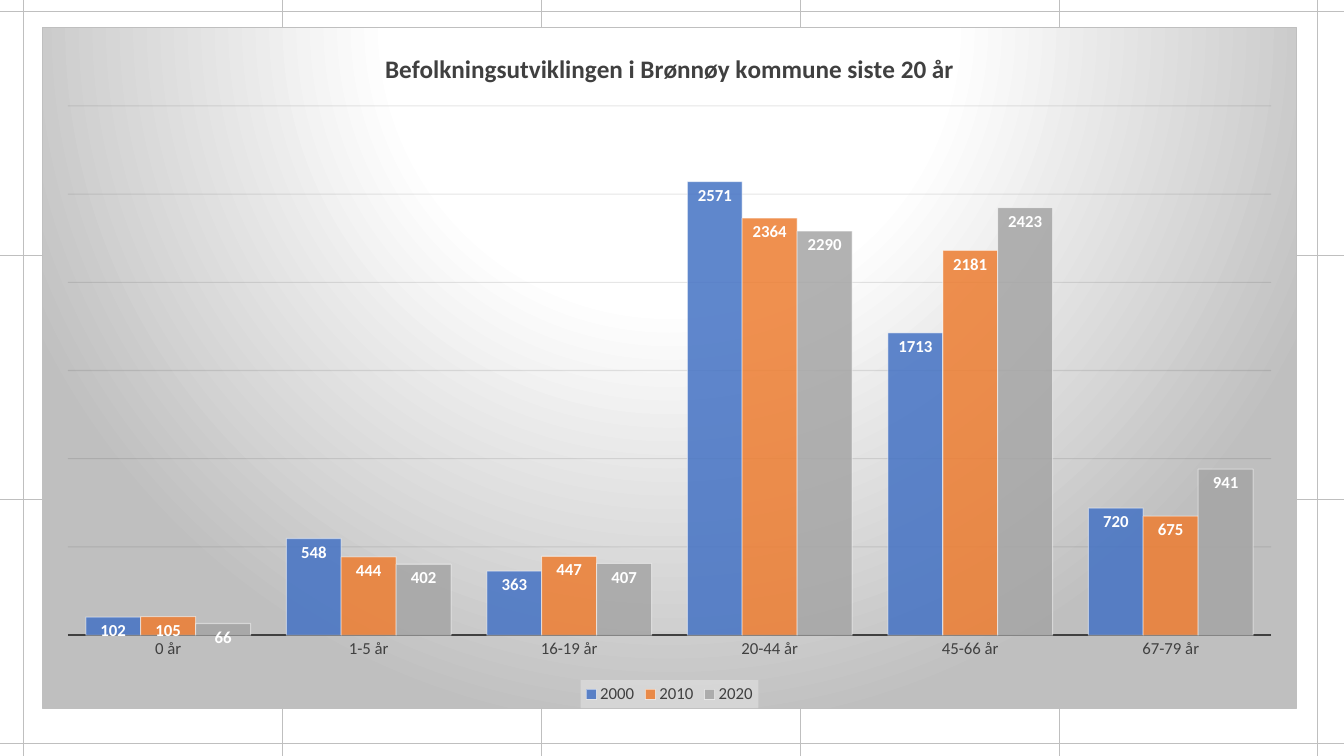
from lxml import etree
from pptx import Presentation
from pptx.chart.data import CategoryChartData
from pptx.dml.color import RGBColor
from pptx.enum.chart import (XL_CHART_TYPE as CT, XL_LABEL_POSITION as LP,
                             XL_LEGEND_POSITION as LG, XL_TICK_MARK as TM)
from pptx.enum.shapes import MSO_CONNECTOR as MC
from pptx.oxml import parse_xml
from pptx.oxml.ns import nsdecls, qn
from pptx.util import Inches, Pt

# Content
TITLE = "Befolkningsutviklingen i Brønnøy kommune siste 20 år"
AGES = ["0 år", "1-5 år", "16-19 år", "20-44 år", "45-66 år", "67-79 år"]
SERIES = [
    ("2000", "4472C4", [102, 548, 363, 2571, 1713, 720]),
    ("2010", "ED7D31", [105, 444, 447, 2364, 2181, 675]),
    ("2020", "A5A5A5", [66, 402, 407, 2290, 2423, 941]),
]
FONT, DARK, GREY, WHITE = "Calibri", "404040", "BFBFBF", "FFFFFF"
WIDTH, HEIGHT = 13.33, 7.5
CHART_BOX = (0.42, 0.27, 12.44, 6.76)
PLOT_BOX = {"x": 0.02, "y": 0.115, "w": 0.96, "h": 0.778}  # shares of the chart

PANEL = f"""<c:spPr {nsdecls('c', 'a')}><a:gradFill rotWithShape="1"><a:gsLst>
<a:gs pos="0"><a:srgbClr val="{WHITE}"/></a:gs>
<a:gs pos="39000"><a:srgbClr val="{WHITE}"/></a:gs>
<a:gs pos="100000"><a:srgbClr val="{GREY}"/></a:gs></a:gsLst>
<a:path path="circle"><a:fillToRect l="50000" t="-80000" r="50000" b="180000"/></a:path>
</a:gradFill><a:ln w="9525"><a:solidFill><a:srgbClr val="{GREY}"/></a:solidFill></a:ln></c:spPr>"""
LEGEND_FILL = f"""<c:spPr {nsdecls('c', 'a')}><a:solidFill><a:srgbClr val="F2F2F2">
<a:alpha val="39000"/></a:srgbClr></a:solidFill><a:ln><a:noFill/></a:ln></c:spPr>"""


def paint(fill, color, alpha=100):
    fill.solid()
    fill.fore_color.rgb = RGBColor.from_string(color)
    if alpha < 100:
        clr = fill._xPr.find(".//" + qn("a:srgbClr"))
        etree.SubElement(clr, qn("a:alpha")).set("val", str(alpha * 1000))


def stroke(line, color, width, alpha=100):
    line.width = Pt(width)
    paint(line.fill, color, alpha)


def style(font, size, color, bold=False):
    font.name, font.size, font.bold = FONT, Pt(size), bold
    font.color.rgb = RGBColor.from_string(color)


def add_rule(s, x1, y1, x2, y2):
    line = s.shapes.add_connector(MC.STRAIGHT, *map(Inches, (x1, y1, x2, y2)))
    stroke(line.line, GREY, 0.5)
    etree.SubElement(line._element.spPr, qn("a:effectLst"))


prs = Presentation()
prs.slide_width, prs.slide_height = Inches(WIDTH), Inches(HEIGHT)
s = prs.slides.add_slide(prs.slide_layouts[6])

# Background grid
for i in range(4):
    y = 0.11 + 2.42 * i
    add_rule(s, 0, y, WIDTH, y)
for i in range(6):
    x = 0.23 + 2.568 * i
    add_rule(s, x, HEIGHT, x, 0)

# Chart
data = CategoryChartData(number_format="0")
data.categories = AGES
for name, _, values in SERIES:
    data.add_series(name, values)
chart = s.shapes.add_chart(CT.COLUMN_CLUSTERED, *map(Inches, CHART_BOX), data).chart
style(chart.font, 10, "000000")
chart._chartSpace.find(qn("c:chart")).addnext(parse_xml(PANEL))

chart.has_title = True
title_p = chart.chart_title.text_frame.paragraphs[0]
title_p.text = TITLE
style(title_p.font, 18, DARK, True)
chart.chart_title.include_in_layout = False

# Plot area placement
plot_area = chart._chartSpace.find(".//" + qn("c:plotArea"))
for old in plot_area.findall(qn("c:layout")):
    plot_area.remove(old)
layout = etree.Element(qn("c:layout"))
plot_area.insert(0, layout)
manual = etree.SubElement(layout, qn("c:manualLayout"))
settings = {"layoutTarget": "inner", "xMode": "edge", "yMode": "edge", **PLOT_BOX}
for tag, value in settings.items():
    etree.SubElement(manual, qn("c:" + tag)).set("val", str(value))

# Axes
cat, val = chart.category_axis, chart.value_axis
cat.major_tick_mark = cat.minor_tick_mark = TM.NONE
style(cat.tick_labels.font, 12, DARK)
stroke(cat.format.line, DARK, 1.5)
val.minimum_scale, val.maximum_scale, val.major_unit = 0, 3000, 500
val.has_major_gridlines = True
stroke(val.major_gridlines.format.line, "0D0D0D", 0.75, 10)
val.visible = False

# Columns and labels
plot = chart.plots[0]
plot.gap_width, plot.overlap, plot.vary_by_categories = 65, 0, False
for series, (_, color, _) in zip(plot.series, SERIES):
    paint(series.format.fill, color, 85)
    stroke(series.format.line, WHITE, 0.75, 50)
    labels = series.data_labels
    labels.show_value, labels.position = True, LP.INSIDE_END
    labels.number_format, labels.number_format_is_linked = "0", False
    style(labels.font, 12, WHITE, True)

# Legend
chart.has_legend = True
legend = chart.legend
legend.position, legend.include_in_layout = LG.BOTTOM, False
style(legend.font, 12, DARK)
legend._element.find(qn("c:txPr")).addprevious(parse_xml(LEGEND_FILL))

prs.save("out.pptx")
